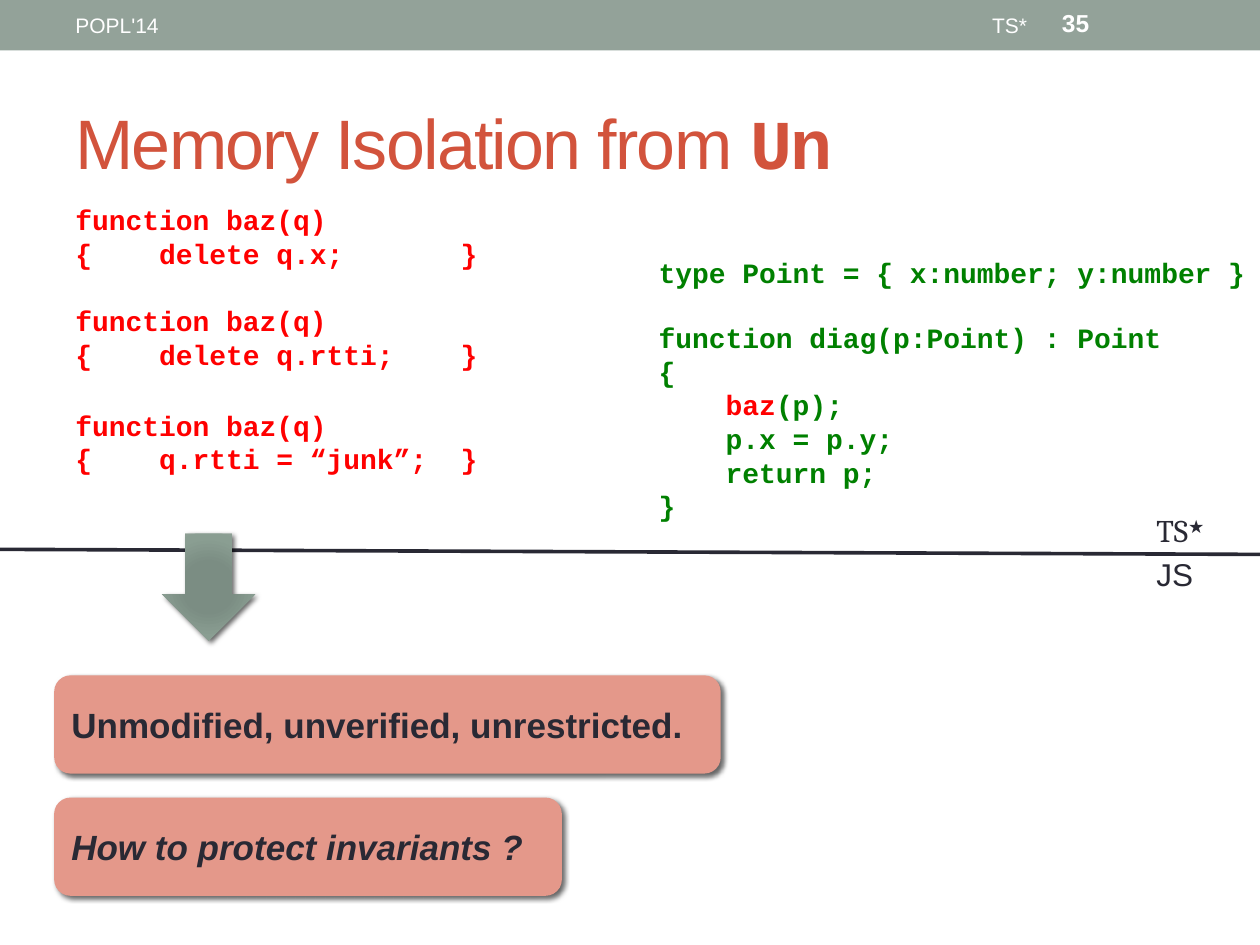
from dataclasses import dataclass

from lxml import etree
from pptx import Presentation
from pptx.dml.color import RGBColor
from pptx.enum.shapes import MSO_CONNECTOR, MSO_SHAPE
from pptx.enum.text import MSO_ANCHOR, PP_ALIGN
from pptx.oxml.ns import qn
from pptx.util import Inches, Pt

RECTANGLE = MSO_SHAPE.RECTANGLE
ROUNDED = MSO_SHAPE.ROUNDED_RECTANGLE
RIGHT_ARROW = MSO_SHAPE.RIGHT_ARROW
STRAIGHT = MSO_CONNECTOR.STRAIGHT
TOP, MIDDLE = MSO_ANCHOR.TOP, MSO_ANCHOR.MIDDLE
LEFT, RIGHT = PP_ALIGN.LEFT, PP_ALIGN.RIGHT


@dataclass(frozen=True)
class Theme:
    sans: str = "Arial"
    serif: str = "Cambria"
    mono: str = "Courier New"
    ink: str = "292934"
    white: str = "FFFFFF"
    header: str = "93A299"
    title: str = "D2533C"
    untrusted: str = "FF0000"
    typed: str = "008000"
    callout: str = "E4988A"
    shadow: str = "000000"
    arrow: tuple = ((0, "7B8E82"), (34, "7B8D83"), (70, "8A9E92"), (100, "93A299"))
    title_size: int = 40
    callout_size: int = 20
    label_size: int = 18
    code_size: int = 16
    number_size: int = 14
    header_size: int = 12


THEME = Theme()


def add_child(parent, tag, **attributes):
    values = {name: str(value) for name, value in attributes.items()}
    return etree.SubElement(parent, qn(tag), values)


def write_run(paragraph, text, font=THEME.sans, size=THEME.label_size, color=THEME.ink,
              bold=False, italic=False, spacing=None, baseline=None):
    run = paragraph.add_run()
    run.text = text
    run.font.name = font
    run.font.size = Pt(size)
    run.font.bold = bold
    run.font.italic = italic
    run.font.color.rgb = RGBColor.from_string(color)
    properties = run.font._element
    if spacing is not None:
        properties.set("spc", str(spacing * 100))
    if baseline is not None:
        properties.set("baseline", str(baseline * 1000))


def add_text(slide, text, box, anchor=TOP, align=LEFT, wrap=True, **run_format):
    shape = slide.shapes.add_textbox(*map(Inches, box))
    frame = shape.text_frame
    frame.word_wrap = wrap
    frame.vertical_anchor = anchor
    paragraph = frame.paragraphs[0]
    paragraph.alignment = align
    write_run(paragraph, text, **run_format)
    return paragraph


def add_code(slide, lines, box, color):
    shape = slide.shapes.add_textbox(*map(Inches, box))
    frame = shape.text_frame
    frame.word_wrap = False
    for index, (gap, pieces) in enumerate(lines):
        paragraph = frame.add_paragraph() if index else frame.paragraphs[0]
        paragraph.space_before = Pt(gap)
        for text, piece_color in pieces:
            write_run(paragraph, text, font=THEME.mono, size=THEME.code_size,
                      color=piece_color or color, bold=True)


def add_block(slide, kind, box, color):
    shape = slide.shapes.add_shape(kind, *map(Inches, box))
    shape.fill.solid()
    shape.fill.fore_color.rgb = RGBColor.from_string(color)
    shape.line.fill.background()
    shape.shadow.inherit = False
    return shape


def add_shadow(shape):
    effects = shape._element.spPr.find(qn("a:effectLst"))
    shadow = add_child(effects, "a:outerShdw", blurRad=Pt(3), dist=Pt(2),
                       dir=45 * 60000, algn="tl", rotWithShape=0)
    color = add_child(shadow, "a:srgbClr", val=THEME.shadow)
    add_child(color, "a:alpha", val=60000)


def add_callout(slide, text, box, **run_format):
    shape = add_block(slide, ROUNDED, box, THEME.callout)
    add_shadow(shape)
    frame = shape.text_frame
    frame.word_wrap = True
    frame.vertical_anchor = MIDDLE
    paragraph = frame.paragraphs[0]
    paragraph.alignment = LEFT
    write_run(paragraph, text, size=THEME.callout_size, bold=True, **run_format)


def add_down_arrow(slide, box):
    shape = add_block(slide, RIGHT_ARROW, box, THEME.header)
    shape.rotation = 90
    add_shadow(shape)
    shape.fill.gradient()
    gradient = shape._element.spPr.find(qn("a:gradFill"))
    for child in list(gradient):
        gradient.remove(child)
    stops = add_child(gradient, "a:gsLst")
    for position, color in THEME.arrow:
        stop = add_child(stops, "a:gs", pos=position * 1000)
        add_child(stop, "a:srgbClr", val=color)
    radial = add_child(gradient, "a:path", path="circle")
    add_child(radial, "a:fillToRect", l=100000, t=100000, r=100000, b=100000)


def add_divider(slide, start, end):
    line = slide.shapes.add_connector(STRAIGHT, *map(Inches, start + end))
    line.line.color.rgb = RGBColor.from_string(THEME.ink)
    line.line.width = Pt(2.08)
    add_child(line._element.spPr, "a:effectLst")


def add_header(slide):
    add_block(slide, RECTANGLE, (0, 0, 10, 0.4), THEME.header)
    small = {"size": THEME.header_size, "color": THEME.white, "anchor": MIDDLE}
    add_text(slide, "POPL'14", (0.5, 0.02, 3.17, 0.36), **small)
    add_text(slide, "TS*", (3.75, 0.02, 4.5, 0.36), align=RIGHT, **small)
    add_text(slide, "35", (8.33, 0, 1.17, 0.36), anchor=MIDDLE,
             size=THEME.number_size, color=THEME.white, bold=True)


def add_title(slide):
    heading = {"size": THEME.title_size, "color": THEME.title, "spacing": -1}
    paragraph = add_text(slide, "Memory Isolation from ", (0.5, 0.58, 9, 1.08),
                         anchor=MIDDLE, **heading)
    write_run(paragraph, "Un", font=THEME.mono, bold=True, **heading)


def main():
    presentation = Presentation()
    presentation.slide_width = Inches(10)
    presentation.slide_height = Inches(7.5)
    slide = presentation.slides.add_slide(presentation.slide_layouts[6])

    add_header(slide)
    add_title(slide)

    typed_code = [
        (0, [("type Point = { x:number; y:number }", None)]),
        (18, [("function diag(p:Point) : Point", None)]),
        (0, [("{", None)]),
        (0, [("    ", None), ("baz", THEME.untrusted), ("(p);", None)]),
        (0, [("    p.x = p.y;", None)]),
        (0, [("    return p;", None)]),
        (0, [("}", None)]),
    ]
    add_code(slide, typed_code, (5.13, 1.98, 4.87, 2.26), THEME.typed)

    attacks = [(1.56, "delete q.x;"), (2.36, "delete q.rtti;"), (3.19, "q.rtti = “junk”;")]
    for top, statement in attacks:
        lines = [(0, [("function baz(q)", None)]),
                 (0, [(f"{{    {statement:<18}}}", None)])]
        add_code(slide, lines, (0.5, top, 4.14, 0.64), THEME.untrusted)

    add_divider(slide, (0, 4.36), (10, 4.4))
    source_label = add_text(slide, "TS", (9.08, 4.01, 0.8, 0.4), font=THEME.serif)
    write_run(source_label, "★", baseline=30)
    add_text(slide, "JS", (9.08, 4.36, 0.8, 0.4))

    add_down_arrow(slide, (1.23, 4.29, 0.85, 0.74))
    add_callout(slide, "Unmodified, unverified, unrestricted.", (0.43, 5.36, 5.29, 0.78))
    add_callout(slide, "How to protect invariants ?", (0.43, 6.33, 4.03, 0.78), italic=True)

    presentation.save("out.pptx")


if __name__ == "__main__":
    main()
